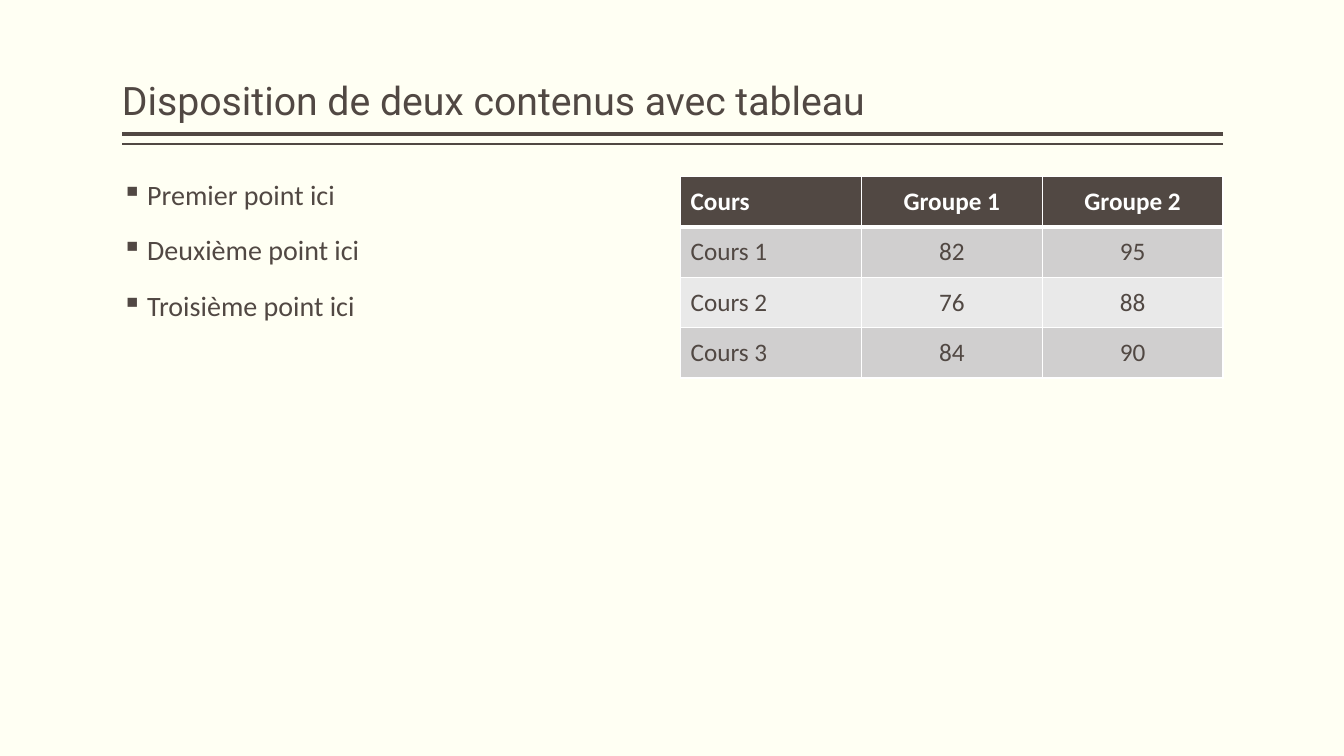
from lxml import etree
from pptx import Presentation
from pptx.dml.color import RGBColor
from pptx.enum.shapes import MSO_CONNECTOR
from pptx.enum.text import MSO_ANCHOR, PP_ALIGN
from pptx.oxml.ns import qn
from pptx.util import Inches, Pt

TITLE = "Disposition de deux contenus avec tableau"
POINTS = ["Premier point ici", "Deuxième point ici", "Troisième point ici"]
ROWS = [
    ("Cours", "Groupe 1", "Groupe 2"),
    ("Cours 1", "82", "95"),
    ("Cours 2", "76", "88"),
    ("Cours 3", "84", "90"),
]
RULES = [(1.33, 3), (1.43, 1)]

CREAM = RGBColor(0xFF, 0xFF, 0xF3)
BROWN = RGBColor(0x51, 0x48, 0x43)
WHITE = RGBColor(0xFF, 0xFF, 0xFF)
BANDS = [RGBColor(0xD0, 0xCF, 0xCF), RGBColor(0xE9, 0xE9, 0xE9)]

LEFT, RIGHT = 1.21, 12.13
CONTENT_TOP, CONTENT_WIDTH = 1.75, 5.38
ROW_HEIGHT = 0.5

STRAIGHT = MSO_CONNECTOR.STRAIGHT
BOTTOM, MIDDLE, TOP = MSO_ANCHOR.BOTTOM, MSO_ANCHOR.MIDDLE, MSO_ANCHOR.TOP
ALIGN_LEFT, ALIGN_CENTER = PP_ALIGN.LEFT, PP_ALIGN.CENTER


def set_font(paragraph, name, size, color, bold=False):
    font = paragraph.font
    font.name, font.size, font.bold = name, Pt(size), bold
    font.color.rgb = color


def set_frame(frame, anchor):
    frame.word_wrap = True
    frame.vertical_anchor = anchor
    frame.margin_left = frame.margin_right = 0
    frame.margin_top = frame.margin_bottom = Inches(0.05)


def add_title(slide):
    title = slide.shapes.title
    title.left, title.top = Inches(LEFT), Inches(0.08)
    title.width, title.height = Inches(RIGHT - LEFT), Inches(1.2)
    title.text_frame.text = TITLE
    set_frame(title.text_frame, BOTTOM)
    paragraph = title.text_frame.paragraphs[0]
    paragraph.alignment = ALIGN_LEFT
    paragraph.line_spacing = 0.9
    set_font(paragraph, "Roboto", 28, BROWN)


def add_rules(slide):
    for y, width in RULES:
        rule = slide.shapes.add_connector(
            STRAIGHT, Inches(RIGHT), Inches(y), Inches(LEFT), Inches(y))
        rule.line.color.rgb = BROWN
        rule.line.width = Pt(width)
        etree.SubElement(rule._element.spPr, qn("a:effectLst"))


def add_points(slide):
    box = slide.shapes.add_textbox(
        Inches(LEFT), Inches(CONTENT_TOP), Inches(CONTENT_WIDTH), Inches(5))
    frame = box.text_frame
    set_frame(frame, TOP)
    frame.text = "\n".join(POINTS)
    for paragraph in frame.paragraphs:
        paragraph.line_spacing = 0.9
        paragraph.space_before = Pt(18)
        set_font(paragraph, "Calibri", 20, BROWN)
        properties = paragraph._p.get_or_add_pPr()
        properties.set("marL", str(Inches(0.25)))
        properties.set("indent", str(-Inches(0.25)))
        bullet = etree.Element(qn("a:buChar"), char="▪")
        properties.find(qn("a:defRPr")).addprevious(bullet)


def set_borders(cell, bottom_width):
    properties = cell._tc.get_or_add_tcPr()
    widths = {"a:lnL": 1, "a:lnR": 1, "a:lnT": 1, "a:lnB": bottom_width}
    for position, (tag, width) in enumerate(widths.items()):
        line = etree.Element(qn(tag), w=str(Pt(width)))
        fill = etree.SubElement(line, qn("a:solidFill"))
        etree.SubElement(fill, qn("a:srgbClr"), val=str(WHITE))
        properties.insert(position, line)


def add_grades(slide):
    table = slide.shapes.add_table(
        len(ROWS), len(ROWS[0]), Inches(RIGHT - CONTENT_WIDTH), Inches(CONTENT_TOP),
        Inches(CONTENT_WIDTH), Inches(ROW_HEIGHT * len(ROWS))).table
    for row, values in enumerate(ROWS):
        header = row == 0
        for column, value in enumerate(values):
            cell = table.cell(row, column)
            cell.text = value
            cell.vertical_anchor = MIDDLE
            cell.fill.solid()
            cell.fill.fore_color.rgb = BROWN if header else BANDS[(row - 1) % 2]
            paragraph = cell.text_frame.paragraphs[0]
            paragraph.alignment = ALIGN_CENTER if column else ALIGN_LEFT
            set_font(paragraph, "Calibri", 18, WHITE if header else BROWN, header)
            set_borders(cell, 3 if header else 1)
            if row == 1:
                cell._tc.tcPr.find(qn("a:lnT")).set("w", str(Pt(3)))


def main():
    presentation = Presentation()
    presentation.slide_width = Inches(13.33)
    presentation.slide_height = Inches(7.5)
    slide = presentation.slides.add_slide(presentation.slide_layouts[5])
    slide.background.fill.solid()
    slide.background.fill.fore_color.rgb = CREAM
    add_rules(slide)
    add_title(slide)
    add_points(slide)
    add_grades(slide)
    presentation.save("out.pptx")


if __name__ == "__main__":
    main()
